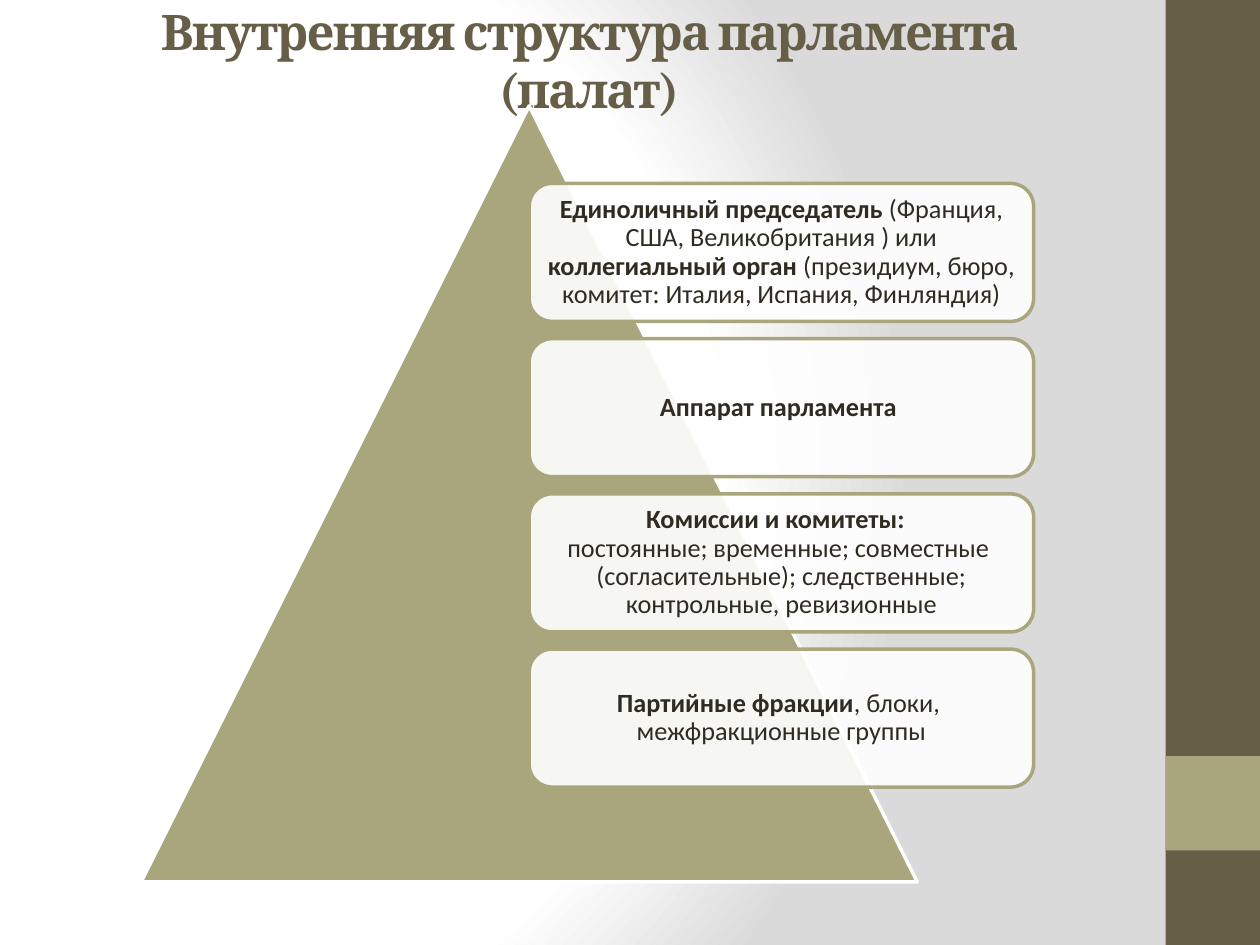
from dataclasses import dataclass
from typing import Optional

from pptx import Presentation
from pptx.dml.color import RGBColor
from pptx.enum.shapes import MSO_SHAPE as Shape
from pptx.enum.text import MSO_ANCHOR as Anchor, PP_ALIGN as Align
from pptx.oxml import parse_xml
from pptx.oxml.ns import nsdecls
from pptx.util import Inches, Pt

WHITE = RGBColor(0xFF, 0xFF, 0xFF)
GREY = RGBColor(0xDA, 0xDA, 0xDA)
BROWN = RGBColor(0x67, 0x5E, 0x47)
OLIVE = RGBColor(0xA9, 0xA5, 0x7C)
INK = RGBColor(0x2F, 0x2B, 0x20)

WIDTH, HEIGHT = 10, 7.5
BAR_WIDTH = 0.075 * WIDTH
ACCENT_HEIGHT = 0.1 * HEIGHT

PYRAMID_LEFT, PYRAMID_TOP, PYRAMID_SIDE = 1.12, 0.84, 6.16
CARD_LEFT = PYRAMID_LEFT + PYRAMID_SIDE / 2
CARD_TOP = PYRAMID_TOP + 0.1 * PYRAMID_SIDE
CARD_WIDTH = 0.65 * PYRAMID_SIDE
CARD_HEIGHT = PYRAMID_SIDE * 8 / 45
CARD_PITCH = CARD_HEIGHT * 9 / 8
CARD_INSET = 0.06

TITLE_FONT = {"name": "Cambria", "size": Pt(28), "bold": True}
CARD_FONT = {"name": "Calibri", "size": Pt(15)}


@dataclass(frozen=True)
class Box:
    left: float
    top: float
    width: float
    height: float

    def lengths(self) -> tuple:
        return tuple(Inches(value) for value in
                     (self.left, self.top, self.width, self.height))


@dataclass(frozen=True)
class Span:
    text: str
    bold: bool = False


CARDS = (
    (Span("Единоличный председатель", True),
     Span(" (Франция, США, Великобритания ) или "),
     Span("коллегиальный орган", True),
     Span(" (президиум, бюро, комитет: Италия, Испания, Финляндия)")),
    (Span("Аппарат парламента ", True),),
    (Span("Комиссии и комитеты:  \n", True),
     Span("постоянные; временные; совместные \n"
          "(согласительные); следственные; контрольные, ревизионные")),
    (Span("Партийные фракции", True),
     Span(", блоки, \nмежфракционные группы")),
)


def set_background(slide) -> None:
    """Fill the slide with a circular gradient centred left of the middle."""
    stops = "".join(
        f'<a:gs pos="{share * 1000}"><a:srgbClr val="{color}"/></a:gs>'
        for share, color in ((0, WHITE), (75, WHITE), (100, GREY)))
    background = parse_xml(
        f'<p:bg {nsdecls("p", "a")}><p:bgPr><a:gradFill rotWithShape="1">'
        f'<a:gsLst>{stops}</a:gsLst><a:path path="circle">'
        '<a:fillToRect l="20000" t="50000" r="100000" b="50000"/></a:path>'
        '</a:gradFill><a:effectLst/></p:bgPr></p:bg>')
    slide.element.cSld.insert(0, background)


def add_shape(slide, kind: Shape, box: Box, fill: RGBColor,
              line: Optional[RGBColor] = None, opacity: int = 100):
    shape = slide.shapes.add_shape(kind, *box.lengths())
    shape.shadow.inherit = False
    shape.fill.solid()
    shape.fill.fore_color.rgb = fill
    if opacity < 100:
        color = shape.element.spPr.find(f".//{{{shape.element.nsmap['a']}}}srgbClr")
        color.append(parse_xml(
            f'<a:alpha {nsdecls("a")} val="{opacity * 1000}"/>'))
    if line is None:
        shape.line.fill.background()
    else:
        shape.line.color.rgb = line
        shape.line.width = Pt(2)
    return shape


def add_run(paragraph, text: str, color: RGBColor, font_values: dict):
    run = paragraph.add_run()
    run.text = text
    for name, value in font_values.items():
        setattr(run.font, name, value)
    run.font.color.rgb = color
    return run


def add_title(slide, text: str) -> None:
    frame = slide.shapes.add_textbox(*Box(0.51, 0.13, 8.33, 0.69).lengths()).text_frame
    frame.word_wrap = True
    frame.vertical_anchor = Anchor.MIDDLE
    paragraph = frame.paragraphs[0]
    paragraph.alignment = Align.CENTER
    run = add_run(paragraph, text, BROWN, TITLE_FONT)
    run.font._element.set("spc", "-100")


def add_card(slide, row: int, spans: tuple) -> None:
    box = Box(CARD_LEFT, CARD_TOP + row * CARD_PITCH, CARD_WIDTH, CARD_HEIGHT)
    card = add_shape(slide, Shape.ROUNDED_RECTANGLE, box, WHITE, OLIVE, opacity=90)
    frame = card.text_frame
    frame.word_wrap = True
    frame.vertical_anchor = Anchor.MIDDLE
    for side in ("left", "top", "right", "bottom"):
        setattr(frame, f"margin_{side}", Inches(CARD_INSET))
    paragraph = frame.paragraphs[0]
    paragraph.alignment = Align.CENTER
    paragraph.line_spacing = 0.9
    for span in spans:
        for index, line in enumerate(span.text.split("\n")):
            if index:
                paragraph.add_line_break()
            if line:
                add_run(paragraph, line, INK, {**CARD_FONT, "bold": span.bold})


def main() -> None:
    presentation = Presentation()
    presentation.slide_width = Inches(WIDTH)
    presentation.slide_height = Inches(HEIGHT)
    slide = presentation.slides.add_slide(presentation.slide_layouts[6])
    set_background(slide)

    bar_left = WIDTH - BAR_WIDTH
    add_shape(slide, Shape.RECTANGLE, Box(bar_left, 0, BAR_WIDTH, HEIGHT), BROWN)
    add_shape(slide, Shape.RECTANGLE,
              Box(bar_left, 0.8 * HEIGHT, BAR_WIDTH, ACCENT_HEIGHT), OLIVE)
    add_title(slide, "Внутренняя структура парламента (палат)")
    add_shape(slide, Shape.ISOSCELES_TRIANGLE,
              Box(PYRAMID_LEFT, PYRAMID_TOP, PYRAMID_SIDE, PYRAMID_SIDE), OLIVE, WHITE)
    for row, spans in enumerate(CARDS):
        add_card(slide, row, spans)

    presentation.save("out.pptx")


if __name__ == "__main__":
    main()
